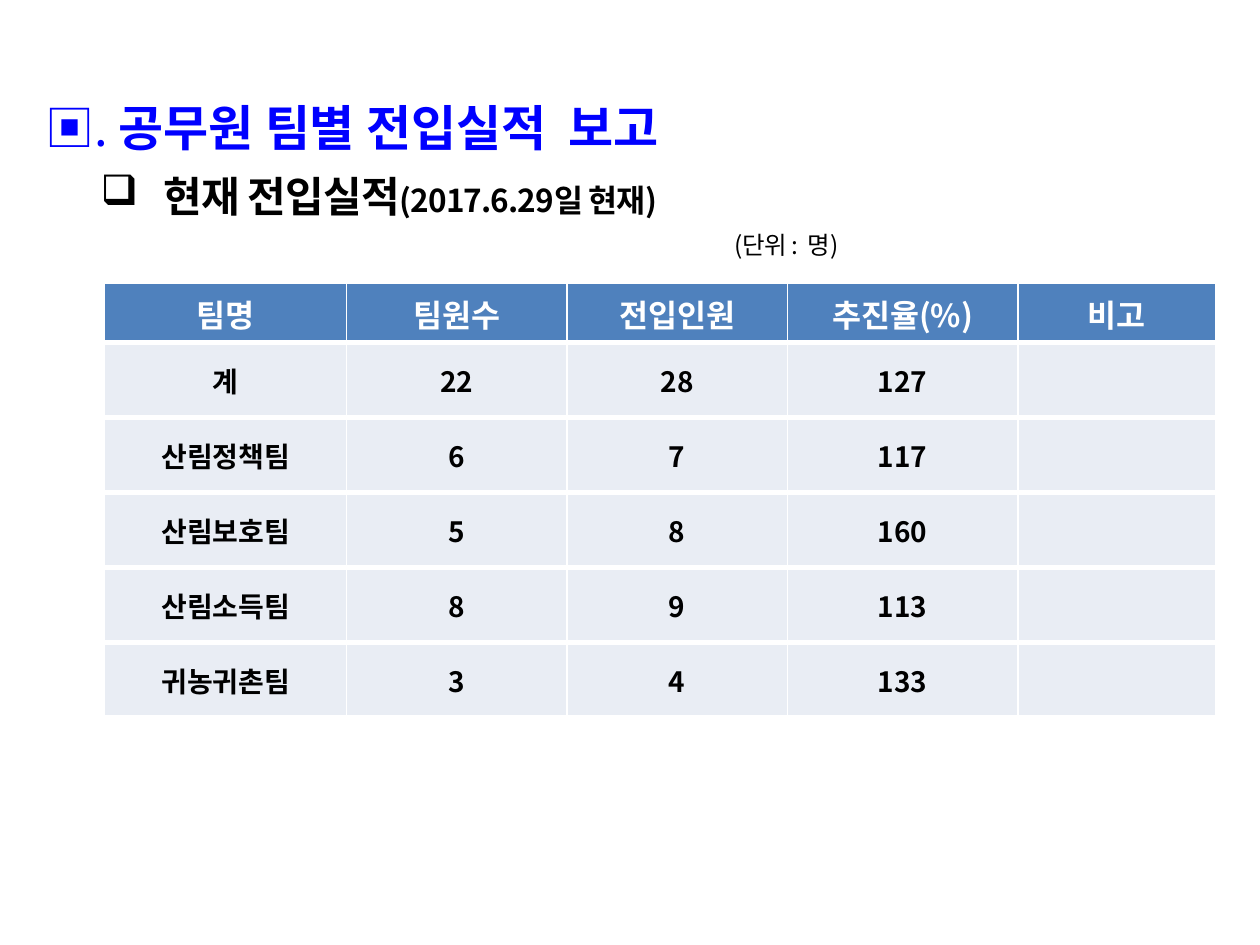
from dataclasses import dataclass

from lxml import etree
from pptx import Presentation
from pptx import util as u
from pptx.dml.color import RGBColor
from pptx.enum import text
from pptx.oxml import ns


@dataclass(frozen=True)
class Theme:
    font: str = "Noto Sans CJK KR"
    title: str = "0000FF"
    ink: str = "000000"
    paper: str = "FFFFFF"
    header: str = "4F81BD"
    body: str = "E9EDF4"
    title_size: int = 28
    subtitle_size: int = 24
    date_size: int = 18
    unit_size: int = 14
    header_size: int = 18
    body_size: int = 16


class SlideBuilder:
    def __init__(self, slide, theme):
        self.slide = slide
        self.theme = theme

    def style(self, font, size, color, bold):
        font.name = self.theme.font
        font.size = u.Pt(size)
        font.bold = bold
        font.color.rgb = RGBColor.from_string(color)
        # East Asian glyphs take their typeface from a separate element
        etree.SubElement(font._rPr, ns.qn("a:ea"), typeface=self.theme.font)

    def place(self, shape, left, top, width, height):
        shape.left, shape.top = u.Cm(left), u.Cm(top)
        shape.width, shape.height = u.Cm(width), u.Cm(height)
        frame = shape.text_frame
        frame.word_wrap = True
        frame.auto_size = text.MSO_AUTO_SIZE.NONE
        frame.vertical_anchor = text.MSO_ANCHOR.MIDDLE
        paragraph = frame.paragraphs[0]
        paragraph.alignment = text.PP_ALIGN.LEFT
        return paragraph

    def add_runs(self, paragraph, runs, spacing=0):
        """Add (text, size, color, bold) runs; spacing is in hundredths of a point."""
        for words, size, color, bold in runs:
            run = paragraph.add_run()
            run.text = words
            self.style(run.font, size, color, bold)
            if spacing:
                run.font._rPr.set("spc", str(spacing))

    def title(self, runs, *box):
        self.add_runs(self.place(self.slide.shapes.title, *box), runs)

    def text_line(self, runs, *box, bullet=None, indent=1.27):
        shape = self.slide.shapes.add_textbox(0, 0, 0, 0)
        paragraph = self.place(shape, *box)
        if bullet:
            properties = paragraph._p.get_or_add_pPr()
            properties.set("marL", str(u.Cm(indent)))
            properties.set("indent", str(-u.Cm(indent)))
            color = etree.SubElement(properties, ns.qn("a:buClr"))
            etree.SubElement(color, ns.qn("a:srgbClr"), val=self.theme.ink)
            etree.SubElement(properties, ns.qn("a:buChar"), char=bullet)
        self.add_runs(paragraph, runs, spacing=-50)

    def cell_borders(self, cell, widths):
        properties = cell._tc.get_or_add_tcPr()
        for side, width in widths.items():
            line = etree.SubElement(properties, ns.qn(f"a:ln{side}"), w=str(u.Pt(width)))
            fill = etree.SubElement(line, ns.qn("a:solidFill"))
            etree.SubElement(fill, ns.qn("a:srgbClr"), val=self.theme.paper)

    def table(self, rows, left, top, column_widths, header_height, row_height):
        theme = self.theme
        heights = [header_height] + [row_height] * (len(rows) - 1)
        table = self.slide.shapes.add_table(
            len(rows), len(column_widths), u.Cm(left), u.Cm(top),
            u.Cm(sum(column_widths)), u.Cm(sum(heights))).table
        for column, width in zip(table.columns, column_widths):
            column.width = u.Cm(width)
        for row_index, (values, height) in enumerate(zip(rows, heights)):
            table.rows[row_index].height = u.Cm(height)
            is_header = row_index == 0
            fill, color, size = (
                (theme.header, theme.paper, theme.header_size) if is_header
                else (theme.body, theme.ink, theme.body_size))
            for column_index, value in enumerate(values):
                cell = table.cell(row_index, column_index)
                self.cell_borders(cell, {"L": 1, "R": 1, "T": 1 if is_header else 3, "B": 3})
                cell.fill.solid()
                cell.fill.fore_color.rgb = RGBColor.from_string(fill)
                cell.vertical_anchor = text.MSO_ANCHOR.MIDDLE
                cell.text = value
                paragraph = cell.text_frame.paragraphs[0]
                paragraph.alignment = text.PP_ALIGN.CENTER
                self.style(paragraph.font, size, color, True)


def main():
    presentation = Presentation()
    presentation.slide_width, presentation.slide_height = u.Cm(25.4), u.Cm(19.05)
    theme = Theme()
    slide = presentation.slides.add_slide(presentation.slide_layouts[5])
    builder = SlideBuilder(slide, theme)

    builder.title([
        ("▣. ", theme.title_size, theme.title, False),
        ("공무원 팀별 전입실적  보고", theme.title_size, theme.title, True),
    ], 0.66, 1.65, 24, 1.8)
    builder.text_line([
        ("현재 전입실적", theme.subtitle_size, theme.ink, True),
        ("(2017.6.29일 현재)", theme.date_size, theme.ink, True),
    ], 1.78, 3.2, 22, 1.5, bullet="❑")
    builder.text_line([
        ("(단위 :  명)", theme.unit_size, theme.ink, False),
    ], 14.55, 4.44, 5, 1)
    builder.table([
        ("팀명", "팀원수", "전입인원", "추진율(%)", "비고"),
        ("계", "22", "28", "127", ""),
        ("산림정책팀", "6", "7", "117", ""),
        ("산림보호팀", "5", "8", "160", ""),
        ("산림소득팀", "8", "9", "113", ""),
        ("귀농귀촌팀", "3", "4", "133", ""),
    ], 2.11, 5.72, (4.88, 4.44, 4.44, 4.65, 3.99), 1.19, 1.51)

    presentation.save("out.pptx")


if __name__ == "__main__":
    main()
